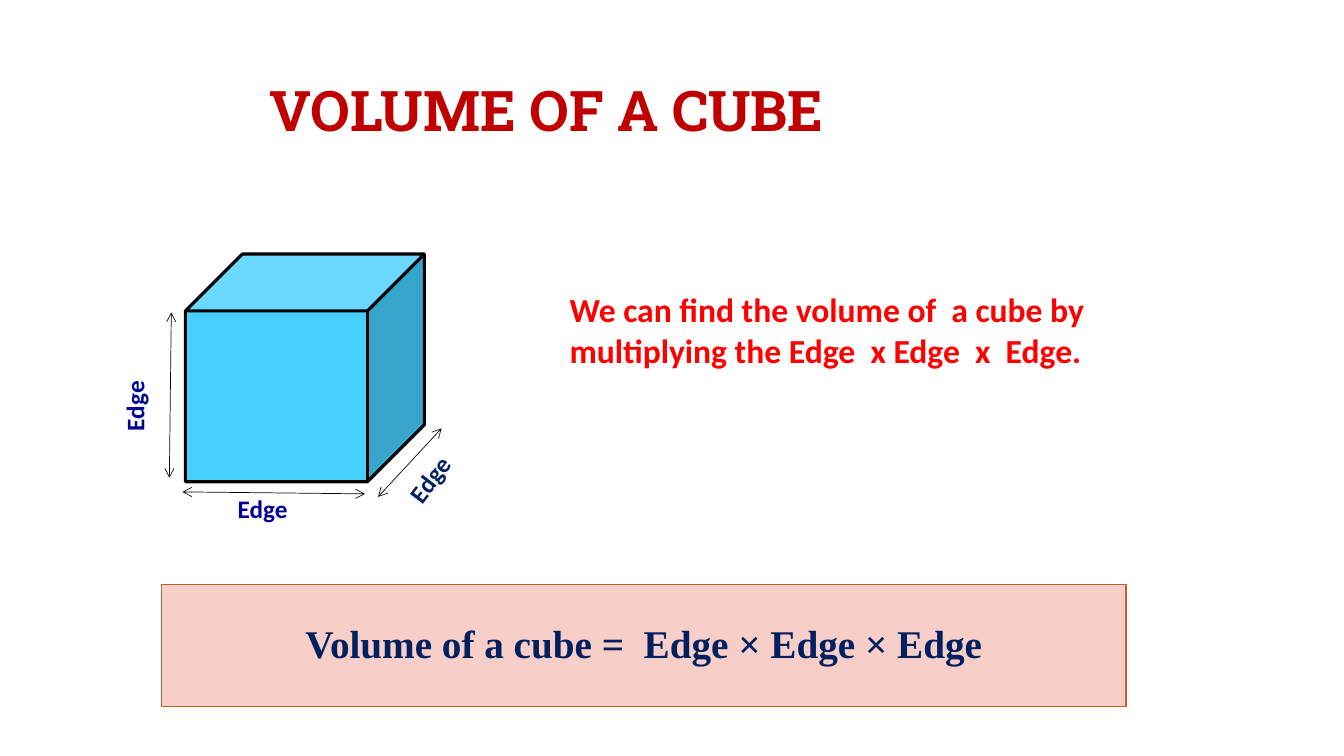
from lxml import etree
from pptx import Presentation
from pptx import util as u
from pptx.dml.color import RGBColor
from pptx.enum import shapes, text
from pptx.oxml.ns import qn

CRIMSON = RGBColor(0xC0, 0x00, 0x00)
RED = RGBColor(0xFF, 0x00, 0x00)
NAVY = RGBColor(0x00, 0x20, 0x60)
BLUE = RGBColor(0x00, 0x00, 0x99)
SKY = RGBColor(0x47, 0xCF, 0xFF)
PINK = RGBColor(0xF8, 0xCF, 0xC8)
BROWN = RGBColor(0xBC, 0x63, 0x29)
BLACK = RGBColor(0x00, 0x00, 0x00)
INK = RGBColor(0x0D, 0x0D, 0x0D)

WIDTH, HEIGHT = u.Inches(13.33), u.Inches(7.5)
PAGE = (0, 0, WIDTH, HEIGHT)


def point(box, x, y):
    left, top, width, height = box
    return round(left + width * x / 100), round(top + height * y / 100)


def within(box, x, y, w, h):
    return (*point(box, x, y), *point((0, 0, box[2], box[3]), w, h))


def write(sp, words, size, font, color, anchor, align=None, spacing=1.0):
    tf = sp.text_frame
    for name, value in dict(word_wrap=True, vertical_anchor=anchor).items():
        setattr(tf, name, value)
    p = tf.paragraphs[0]
    for name, value in dict(alignment=align, line_spacing=spacing).items():
        setattr(p, name, value)
    r = p.add_run()
    r.text = words
    for name, value in dict(size=u.Pt(size), name=font, bold=True).items():
        setattr(r.font, name, value)
    r.font.color.rgb = color


def solid(s, kind, box, fill, line, weight):
    sp = s.shapes.add_shape(kind, *box)
    sp.shadow.inherit = False
    sp.fill.solid()
    sp.fill.fore_color.rgb = fill
    sp.line.color.rgb = line
    sp.line.width = u.Pt(weight)
    return sp


def double_arrow(s, start, end):
    sp = s.shapes.add_connector(shapes.MSO_CONNECTOR.STRAIGHT, *start, *end)
    sp.line.color.rgb = INK
    sp.line.width = u.Pt(0.5)
    for tag in ("a:headEnd", "a:tailEnd"):
        etree.SubElement(sp.line._get_or_add_ln(), qn(tag), type="arrow")
    etree.SubElement(sp._element.spPr, qn("a:effectLst"))


def title(s, box):
    sp = s.shapes.add_textbox(*box)
    write(sp, "VOLUME OF A CUBE", 40, "Roboto Slab", CRIMSON,
          text.MSO_ANCHOR.MIDDLE, spacing=0.9)


def formula(s, box):
    sp = solid(s, shapes.MSO_SHAPE.RECTANGLE, box, PINK, BROWN, 1)
    write(sp, "Volume of a cube =  Edge × Edge × Edge", 28, "Times New Roman",
          NAVY, text.MSO_ANCHOR.MIDDLE, text.PP_ALIGN.CENTER, 0.9)


def cube(s, box):
    sp = solid(s, shapes.MSO_SHAPE.CUBE, box, SKY, BLACK, 2.25)
    sp.adjustments[0] = 0.25
    labels = [
        (103.8, 96.68, 34.6, 307.5, NAVY),
        (36.5, 111.95, 37.55, 0, BLUE),
        (-21.31, 62.39, 37.55, 270, BLUE),
    ]
    label_height = 17.9
    for x, y, width, angle, color in labels:
        place = within(box, x - width / 2, y - label_height / 2,
                       width, label_height)
        sp = s.shapes.add_textbox(*place)
        sp.rotation = angle
        write(sp, "Edge", 18, "Calibri", color, text.MSO_ANCHOR.TOP)
    arrows = [
        ((-1.27, 104.42), (75.11, 105.31)),
        ((80.59, 106.64), (107.17, 76.55)),
        ((-6.75, 98.23), (-5.91, 25.66)),
    ]
    for start, end in arrows:
        double_arrow(s, point(box, *start), point(box, *end))


def explanation(s, box):
    sp = s.shapes.add_textbox(*box)
    write(sp, "We can find the volume of  a cube by multiplying the "
          "Edge  x Edge  x  Edge.", 24, "Calibri", RED, text.MSO_ANCHOR.TOP)


def main():
    prs = Presentation()
    prs.slide_width, prs.slide_height = WIDTH, HEIGHT
    s = prs.slides.add_slide(prs.slide_layouts[6])
    title(s, within(PAGE, 19.28, 5.33, 73.89, 19.33))
    formula(s, within(PAGE, 12, 77.33, 71.79, 16.13))
    cube(s, within(PAGE, 13.8, 33.6, 17.78, 30.13))
    explanation(s, within(PAGE, 41.64, 37.6, 44.94, 12.13))
    prs.save("out.pptx")


if __name__ == "__main__":
    main()
